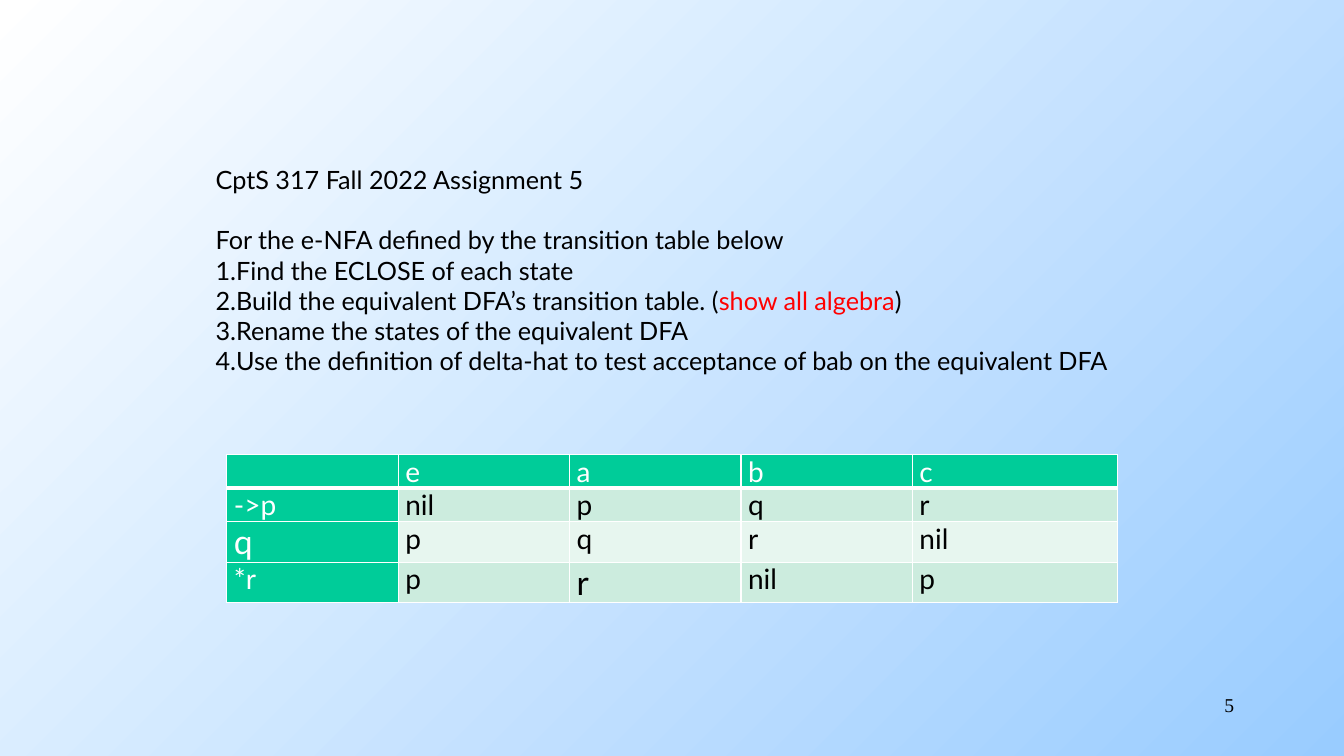
"""Build an assignment slide with numbered tasks and an e-NFA transition table."""
import pptx
import pptx.dml.color
import pptx.enum.text
import pptx.oxml
import pptx.oxml.ns
import pptx.util

Inches = pptx.util.Inches
Pt = pptx.util.Pt
RGBColor = pptx.dml.color.RGBColor

WHITE = RGBColor(0xFF, 0xFF, 0xFF)
BLACK = RGBColor(0x00, 0x00, 0x00)
RED = RGBColor(0xFF, 0x00, 0x00)
SKY = RGBColor(0x99, 0xCC, 0xFF)
GREEN = RGBColor(0x00, 0xCC, 0x99)
BANDS = [RGBColor(0xE7, 0xF6, 0xEF), RGBColor(0xCC, 0xEC, 0xDE)]

HEADING = "CptS 317 Fall 2022 Assignment 5"
INTRODUCTION = "For the e-NFA defined by the transition table below"
TASKS = [
    ["Find the ECLOSE of each state"],
    ["Build the equivalent DFA’s transition table. (", "show all algebra", ")"],
    ["Rename the states of the equivalent DFA"],
    ["Use the definition of delta-hat to test acceptance of bab on the equivalent DFA"],
]
TRANSITIONS = [
    ["", "e", "a", "b", "c"],
    ["->p", "nil", "p", "q", "r"],
    ["q", "p", "q", "r", "nil"],
    ["*r", "p", "r", "nil", "p"],
]
LARGE_CELLS = [(2, 0), (3, 2)]
COLUMN_WIDTHS = [1.7, 1.7, 1.7, 1.7, 2.03]
ROW_HEIGHTS = [0.33, 0.33, 0.4, 0.4]


def format_run(run, size, color, font="Lato"):
    run.font.size = Pt(size)
    run.font.name = font
    run.font.color.rgb = color


def add_border(cell, position, side, points):
    border = pptx.oxml.parse_xml(
        f'<a:ln{side} {pptx.oxml.ns.nsdecls("a")} w="{Pt(points)}">'
        f'<a:solidFill><a:srgbClr val="{WHITE}"/></a:solidFill></a:ln{side}>'
    )
    cell._tc.get_or_add_tcPr().insert(position, border)


presentation = pptx.Presentation()
presentation.slide_width = Inches(13.33)
presentation.slide_height = Inches(7.5)
slide = presentation.slides.add_slide(presentation.slide_layouts[6])

background = slide.background.fill
background.gradient()
background.gradient_angle = 315
for stop, position, color in zip(background.gradient_stops, [0, 1], [WHITE, SKY]):
    stop.position = position
    stop.color.rgb = color

number_box = slide.shapes.add_textbox(Inches(9.56), Inches(6.83), Inches(2.78), Inches(0.5))
number_box.text_frame.word_wrap = True
paragraph = number_box.text_frame.paragraphs[0]
paragraph.text = "5"
paragraph.alignment = pptx.enum.text.PP_ALIGN.RIGHT
format_run(paragraph.runs[0], 14, BLACK, "Times New Roman")

table_frame = slide.shapes.add_table(
    len(ROW_HEIGHTS), len(COLUMN_WIDTHS), Inches(2.25), Inches(4.51),
    Inches(sum(COLUMN_WIDTHS)), Inches(sum(ROW_HEIGHTS)),
)
table = table_frame.table
for column, width in zip(table.columns, COLUMN_WIDTHS):
    column.width = Inches(width)
for row, height in zip(table.rows, ROW_HEIGHTS):
    row.height = Inches(height)

for row_index, states in enumerate(TRANSITIONS):
    for column_index, state in enumerate(states):
        cell = table.cell(row_index, column_index)
        is_header = row_index == 0 or column_index == 0
        cell.margin_left = cell.margin_right = Inches(0.07)
        cell.margin_top = cell.margin_bottom = 0
        cell.fill.solid()
        cell.fill.fore_color.rgb = GREEN if is_header else BANDS[row_index % 2]
        cell.text_frame.text = state
        size = 24 if (row_index, column_index) in LARGE_CELLS else 20
        for run in cell.text_frame.paragraphs[0].runs:
            format_run(run, size, WHITE if is_header else BLACK)
            run.font.bold = False
        for position, side in enumerate("LRTB"):
            beside_header = (row_index, side) in [(0, "B"), (1, "T")]
            add_border(cell, position, side, 3 if beside_header else 1)

task_box = slide.shapes.add_textbox(Inches(2.04), Inches(1.63), Inches(9.25), Inches(2.73))
text_frame = task_box.text_frame
text_frame.word_wrap = True
text_frame.margin_top = text_frame.margin_bottom = 0
for index, parts in enumerate([[HEADING], [INTRODUCTION], *TASKS]):
    paragraph = text_frame.add_paragraph() if index else text_frame.paragraphs[0]
    for part in parts:
        run = paragraph.add_run()
        run.text = part
        format_run(run, 18, RED if part == "show all algebra" else BLACK)
    if index > 1:
        properties = paragraph._p.get_or_add_pPr()
        properties.set("marL", "0")
        properties.set("indent", "0")
        properties.append(pptx.oxml.parse_xml(
            f'<a:buAutoNum {pptx.oxml.ns.nsdecls("a")} type="arabicPeriod"/>'
        ))
text_frame.paragraphs[0].space_after = Pt(21.6)

presentation.save("out.pptx")
